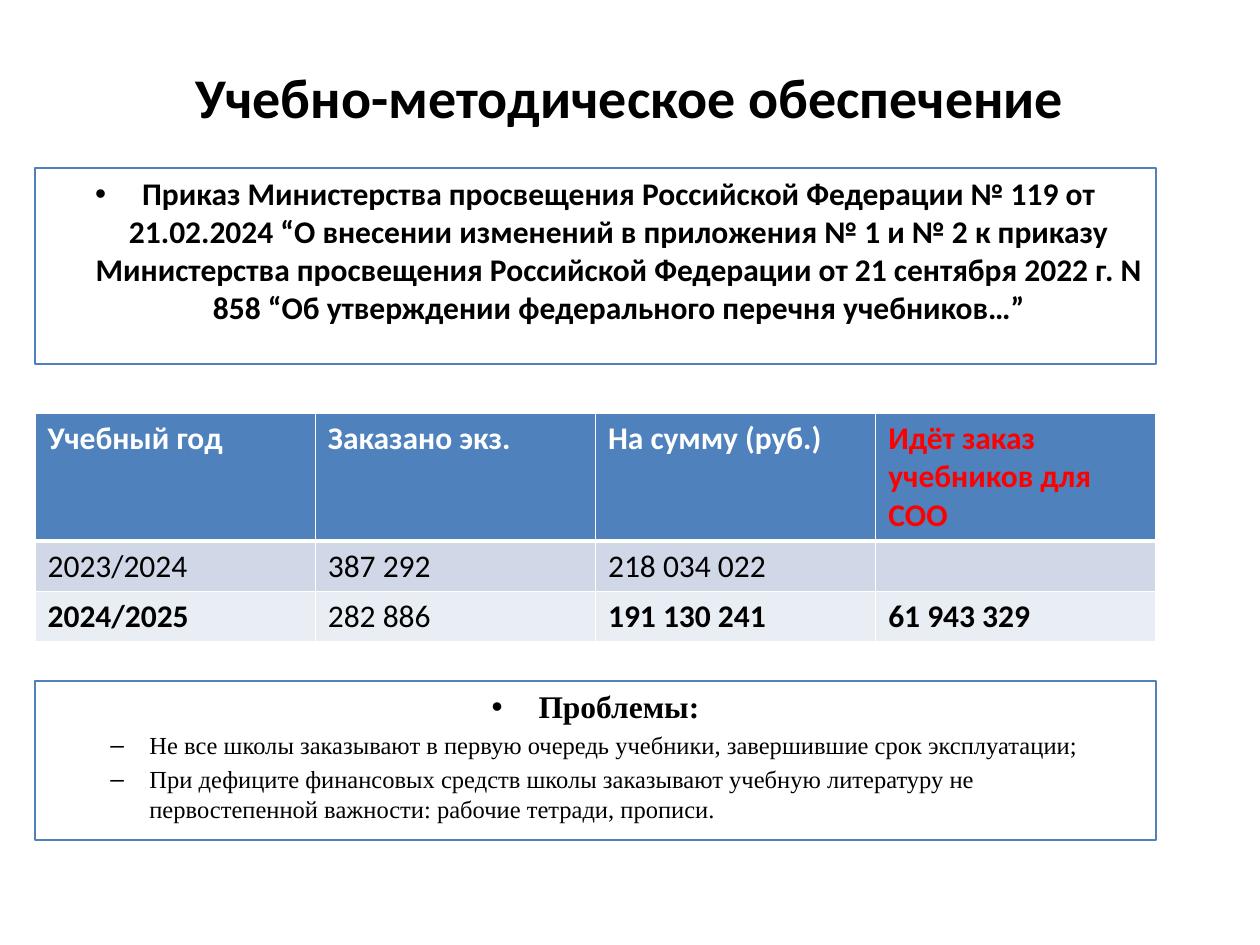
from dataclasses import dataclass

import pptx
import pptx.dml.color
import pptx.enum.shapes
import pptx.enum.text
import pptx.oxml
import pptx.oxml.ns
import pptx.oxml.xmlchemy
import pptx.util
from lxml import etree

RGBColor = pptx.dml.color.RGBColor
Align = pptx.enum.text.PP_ALIGN
Anchor = pptx.enum.text.MSO_ANCHOR

PX_PER_INCH = 126
BLACK = RGBColor(0x00, 0x00, 0x00)
WHITE = RGBColor(0xFF, 0xFF, 0xFF)
RED = RGBColor(0xFF, 0x00, 0x00)
BLUE = RGBColor(0x4F, 0x81, 0xBD)
BAND_DARK = RGBColor(0xD0, 0xD8, 0xE8)
BAND_LIGHT = RGBColor(0xE9, 0xED, 0xF4)
SANS = "Calibri"
SERIF = "Times New Roman"

LEFT, WIDTH = 35, 1121
TABLE_TOP = 413
ROW_HEIGHTS = (128, 50, 50)


@dataclass(frozen=True)
class Bullet:
    text: str
    size: int
    font: str
    bold: bool = False
    align: Align = Align.LEFT
    level: int = 0
    mark: str = "•"
    margin: int = 47
    hanging: int = 47


@dataclass(frozen=True)
class Panel:
    top: int
    height: int
    bullets: tuple[Bullet, ...]


@dataclass(frozen=True)
class Entry:
    text: str
    bold: bool = False
    color: RGBColor = BLACK


@dataclass(frozen=True)
class Row:
    fill: RGBColor
    bottom_line: int
    entries: tuple[Entry, ...]


def problem(text: str) -> Bullet:
    return Bullet(text, 14, SERIF, level=1, mark="–", margin=102, hanging=39)


PANELS = (
    Panel(168, 196, (
        Bullet(
            "Приказ Министерства просвещения Российской Федерации № 119 от "
            "21.02.2024 “О внесении изменений в приложения № 1 и № 2 к приказу "
            "Министерства просвещения Российской Федерации от 21 сентября 2022 г. "
            "N 858 “Об утверждении федерального перечня учебников…”",
            18, SANS, True, Align.CENTER),
    )),
    Panel(681, 159, (
        Bullet("Проблемы:", 18, SERIF, True, Align.CENTER),
        problem("Не все школы заказывают в первую очередь учебники, "
                "завершившие срок эксплуатации;"),
        problem("При дефиците финансовых средств школы заказывают учебную литературу "
                "не первостепенной важности: рабочие тетради, прописи."),
    )),
)

ORDERS = (
    Row(BLUE, 3, (
        Entry("Учебный год", True, WHITE),
        Entry("Заказано экз.", True, WHITE),
        Entry("На сумму (руб.)", True, WHITE),
        Entry("Идёт заказ учебников для СОО", True, RED),
    )),
    Row(BAND_DARK, 1, (
        Entry("2023/2024"), Entry("387 292"), Entry("218 034 022"), Entry(""),
    )),
    Row(BAND_LIGHT, 1, (
        Entry("2024/2025", True), Entry("282 886"),
        Entry("191 130 241", True), Entry("61 943 329", True),
    )),
)


def px(length: int) -> pptx.util.Emu:
    return pptx.util.Emu(round(length * 914400 / PX_PER_INCH))


def add_run(paragraph, text: str, size: int, font: str, bold: bool,
            color: RGBColor = BLACK) -> None:
    run = paragraph.add_run()
    run.text = text
    run.font.size = pptx.util.Pt(size)
    run.font.name = font
    run.font.bold = bold
    run.font.color.rgb = color


def add_title(slide, text: str) -> None:
    frame = slide.shapes.add_textbox(px(63), px(38), px(1134), px(117)).text_frame
    frame.word_wrap = True
    frame.vertical_anchor = Anchor.MIDDLE
    heading = frame.paragraphs[0]
    heading.alignment = Align.CENTER
    add_run(heading, text, 32, SANS, True)


def write_bullet(paragraph, bullet: Bullet) -> None:
    paragraph.alignment = bullet.align
    paragraph.level = bullet.level
    paragraph.space_before = pptx.util.Pt(bullet.size * 0.2)
    add_run(paragraph, bullet.text, bullet.size, bullet.font, bullet.bold)
    properties = paragraph._p.get_or_add_pPr()
    properties.set("marL", str(px(bullet.margin)))
    properties.set("indent", str(-px(bullet.hanging)))
    qn = pptx.oxml.ns.qn
    etree.SubElement(properties, qn("a:buFont")).set("typeface", "Arial")
    etree.SubElement(properties, qn("a:buChar")).set("char", bullet.mark)


def add_panel(slide, panel: Panel) -> None:
    box = slide.shapes.add_shape(
        pptx.enum.shapes.MSO_SHAPE.RECTANGLE,
        px(LEFT), px(panel.top), px(WIDTH), px(panel.height))
    box.shadow.inherit = False
    box.fill.background()
    box.line.color.rgb = BLUE
    box.line.width = pptx.util.Pt(0.75)
    frame = box.text_frame
    frame.word_wrap = True
    frame.vertical_anchor = Anchor.TOP
    for index, bullet in enumerate(panel.bullets):
        paragraph = frame.add_paragraph() if index else frame.paragraphs[0]
        write_bullet(paragraph, bullet)


def set_borders(cell, top: int, bottom: int) -> None:
    """Draw white cell borders; the widths are in points."""
    qn = pptx.oxml.ns.qn
    properties = cell._tc.get_or_add_tcPr()
    for side, width in (("L", 1), ("R", 1), ("T", top), ("B", bottom)):
        line = etree.SubElement(properties, qn(f"a:ln{side}"))
        line.set("w", str(pptx.util.Pt(width)))
        fill = etree.SubElement(line, qn("a:solidFill"))
        etree.SubElement(fill, qn("a:srgbClr")).set("val", str(WHITE))


def add_orders_table(slide, rows: tuple[Row, ...]) -> None:
    columns = len(rows[0].entries)
    table = slide.shapes.add_table(
        len(rows), columns, px(LEFT), px(TABLE_TOP),
        px(WIDTH), px(sum(ROW_HEIGHTS))).table
    top_line = 1
    for row_index, row in enumerate(rows):
        table.rows[row_index].height = px(ROW_HEIGHTS[row_index])
        for column, entry in enumerate(row.entries):
            cell = table.cell(row_index, column)
            set_borders(cell, top_line, row.bottom_line)
            cell.fill.solid()
            cell.fill.fore_color.rgb = row.fill
            if entry.text:
                add_run(cell.text_frame.paragraphs[0], entry.text, 18, SANS,
                        entry.bold, entry.color)
        top_line = row.bottom_line


def main() -> None:
    deck = pptx.Presentation()
    deck.slide_width, deck.slide_height = px(1260), px(945)
    slide = deck.slides.add_slide(deck.slide_layouts[6])
    add_title(slide, "Учебно-методическое обеспечение")
    order_panel, problems_panel = PANELS
    add_panel(slide, order_panel)
    add_orders_table(slide, ORDERS)
    add_panel(slide, problems_panel)
    deck.save("out.pptx")


if __name__ == "__main__":
    main()
